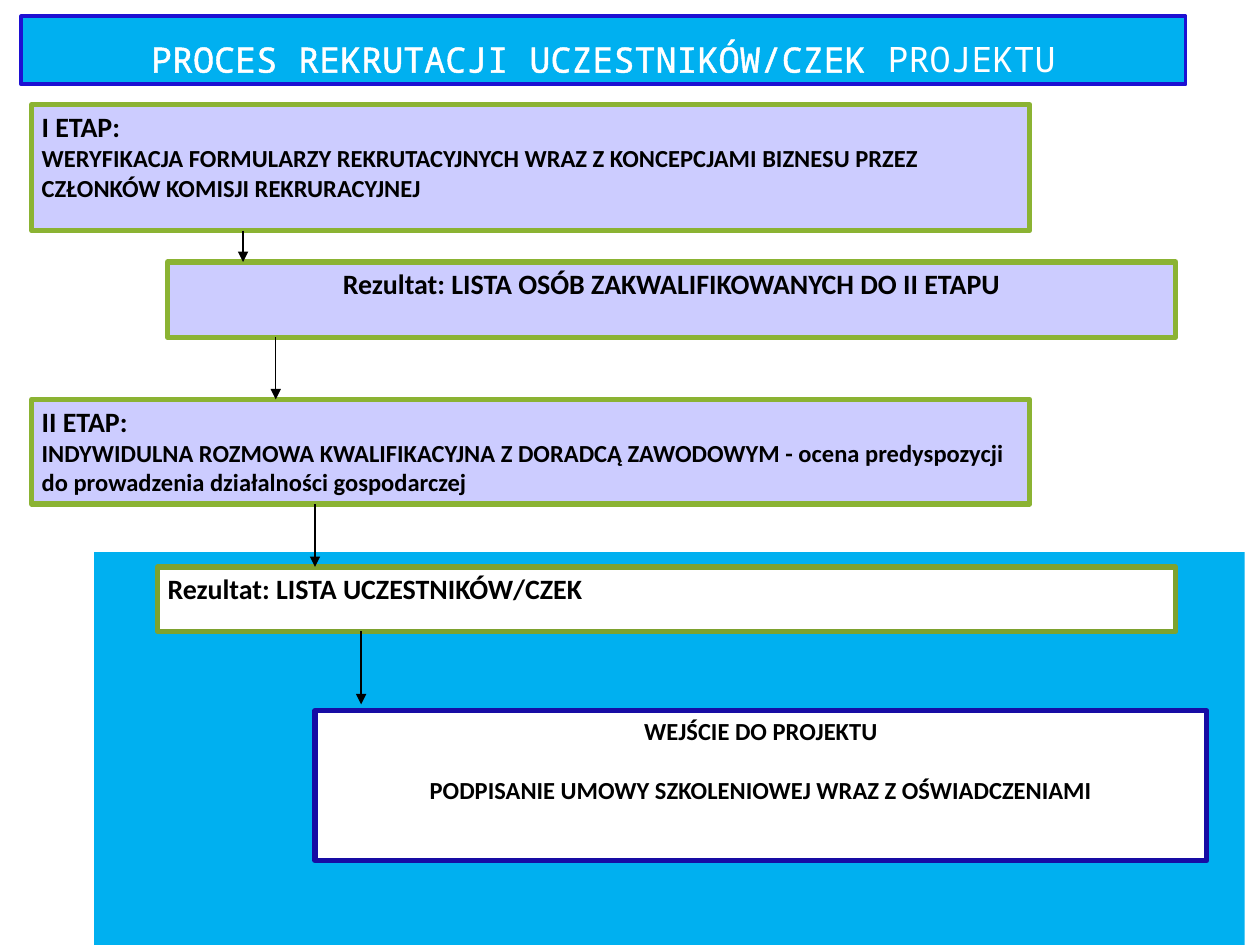
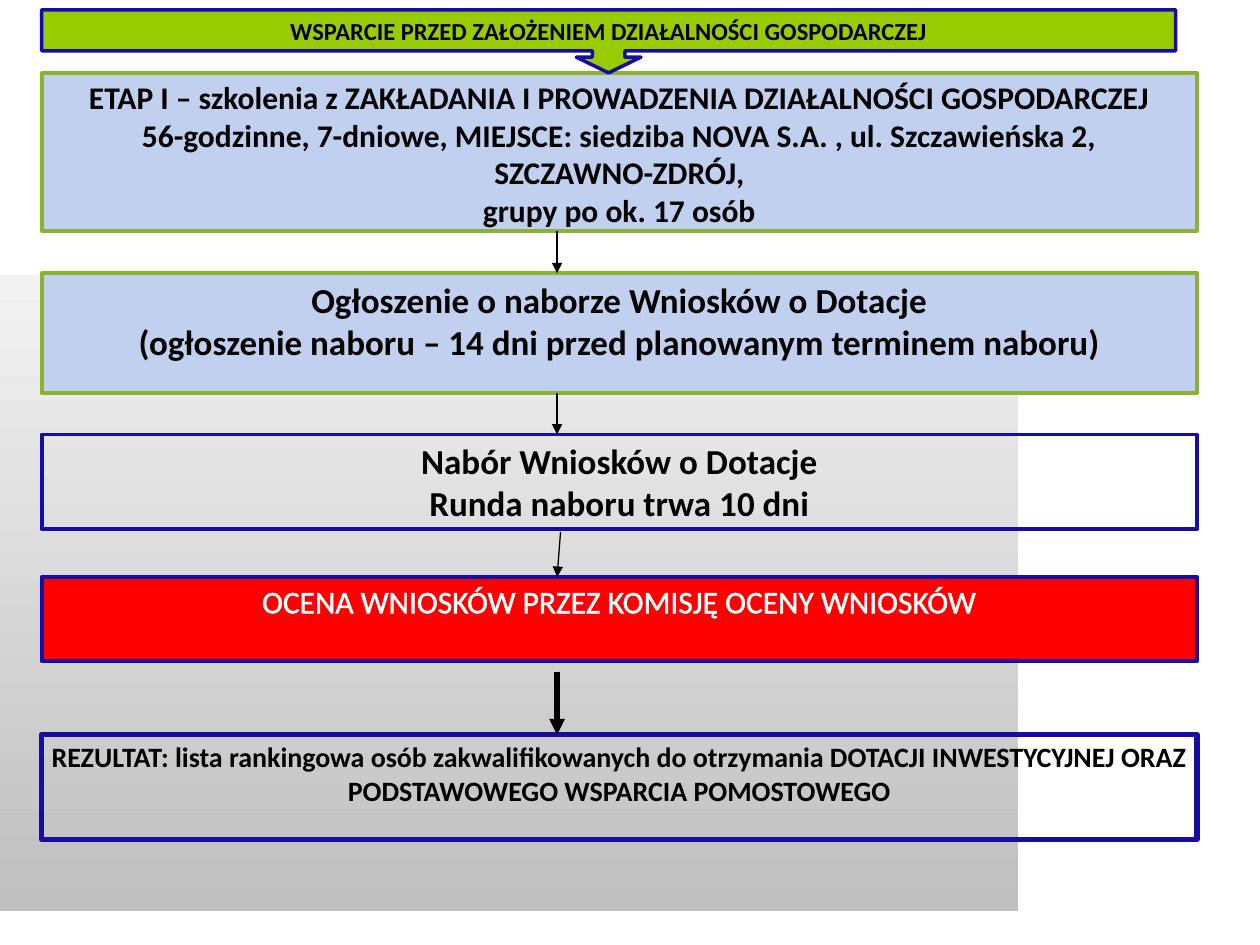
"""Build two flow-chart slides on recruitment and on support before starting a business."""
from lxml import etree
from pptx import Presentation
from pptx import util as u
from pptx.dml.color import RGBColor
from pptx.enum import shapes, text
from pptx.oxml.ns import qn

BLACK, WHITE, RED = "000000", "FFFFFF", "FF0000"
SKY, LILAC, PALE_BLUE, LIME = "00B0F0", "CCCCFF", "C0D0EE", "99CC00"
GREEN, OLIVE, NAVY, VIOLET = "8BB333", "7EA22E", "170CA4", "1E10D2"
RECTANGLE = shapes.MSO_SHAPE.RECTANGLE
CENTER, LEFT = text.PP_ALIGN.CENTER, text.PP_ALIGN.LEFT
OUTLINE_WIDTH = 1.45

TITLE = [("PROCES REKRUTACJI UCZESTNIKÓW/CZEK ", True), ("PROJEKTU", False)]
RECRUITMENT_STEPS = [
    dict(at=(0.64, 2.11, 20.12, 2.54), fill=LILAC, line=GREEN, align=LEFT, lines=[
        ("I ETAP:", 16),
        ("WERYFIKACJA FORMULARZY REKRUTACYJNYCH WRAZ Z KONCEPCJAMI BIZNESU PRZEZ "
         "CZŁONKÓW KOMISJI REKRURACYJNEJ", 14)]),
    dict(at=(3.38, 5.28, 20.32, 1.52), fill=LILAC, line=GREEN, lines=[
        ("Rezultat: LISTA OSÓB ZAKWALIFIKOWANYCH DO II ETAPU", 16)]),
    dict(at=(0.64, 8.05, 20.12, 2.11), fill=LILAC, line=GREEN, align=LEFT, lines=[
        ("II ETAP:", 16),
        ("INDYWIDULNA ROZMOWA KWALIFIKACYJNA Z DORADCĄ ZAWODOWYM - ocena predyspozycji "
         "do prowadzenia działalności gospodarczej", 14)]),
    dict(at=(3.18, 11.43, 20.52, 1.3), fill=WHITE, line=OLIVE, align=LEFT, lines=[
        ("Rezultat: LISTA UCZESTNIKÓW/CZEK", 16)]),
    dict(at=(6.35, 14.33, 17.98, 3.02), fill=WHITE, line=NAVY, space_after=17, lines=[
        ("WEJŚCIE DO PROJEKTU", 14),
        ("PODPISANIE UMOWY SZKOLENIOWEJ WRAZ Z OŚWIADCZENIAMI", 14)]),
]
RECRUITMENT_ARROWS = [dict(x=4.9), dict(x=5.56), dict(x=6.35), dict(x=7.28, end_gap=0.13)]

SUPPORT_HEADER = [("WSPARCIE PRZED ZAŁOŻENIEM DZIAŁALNOŚCI GOSPODARCZEJ", 14)]
SUPPORT_LEFT, SUPPORT_WIDTH = 0.84, 23.29
SUPPORT_STEPS = [
    dict(top=1.47, height=3.18, fill=PALE_BLUE, line=GREEN, lines=[
        ("ETAP I – szkolenia z ZAKŁADANIA I PROWADZENIA DZIAŁALNOŚCI GOSPODARCZEJ", 18),
        ("56-godzinne, 7-dniowe, MIEJSCE: siedziba NOVA S.A. , ul. Szczawieńska 2,", 18),
        ("SZCZAWNO-ZDRÓJ,", 18),
        ("grupy po ok. 17 osób", 18)]),
    dict(top=5.51, height=2.41, fill=PALE_BLUE, line=GREEN, lines=[
        ("Ogłoszenie o naborze Wniosków o Dotacje", 20),
        ("(ogłoszenie naboru – 14 dni przed planowanym terminem naboru)", 20)]),
    dict(top=8.76, height=1.91, line=NAVY, lines=[
        ("Nabór Wniosków o Dotacje", 20),
        ("Runda naboru trwa 10 dni", 20)]),
    dict(top=11.63, height=1.7, fill=RED, line=NAVY, color=WHITE, bold=False, outlined=True,
         lines=[("OCENA WNIOSKÓW PRZEZ KOMISJĘ OCENY WNIOSKÓW", 18)]),
    dict(top=14.81, height=2.11, line=NAVY, weight=3, lines=[
        ("REZULTAT: lista rankingowa osób zakwalifikowanych do otrzymania DOTACJI "
         "INWESTYCYJNEJ ORAZ PODSTAWOWEGO WSPARCIA POMOSTOWEGO", 16)]),
]
SUPPORT_ARROWS = [dict(x=11.23), dict(x=11.23), dict(x=11.23, start_x=11.3, start_gap=0.05),
                  dict(x=11.23, start_gap=0.21, weight=3)]


def rgb(color):
    """Turn a hex string into a colour."""
    return RGBColor.from_string(color)


def add_box(slide, at, fill=None, line=None, weight=3, kind=RECTANGLE):
    """Add a preset shape with a plain fill and border."""
    shape = slide.shapes.add_shape(kind, *map(u.Cm, at))
    shape.shadow.inherit = False
    if fill:
        shape.fill.solid()
        shape.fill.fore_color.rgb = rgb(fill)
    else:
        shape.fill.background()
    if line:
        shape.line.color.rgb = rgb(line)
        shape.line.width = u.Pt(weight)
    else:
        shape.line.fill.background()
    return shape


def add_run(paragraph, words, size, font="Calibri", color=BLACK, bold=True, outlined=False):
    """Add formatted words to a paragraph."""
    run = paragraph.add_run()
    run.text = words
    run.font.size, run.font.name, run.font.bold = u.Pt(size), font, bold
    run.font.color.rgb = rgb(color)
    if outlined:
        outline = etree.Element(qn("a:ln"), w=str(u.Pt(OUTLINE_WIDTH)))
        solid = etree.SubElement(outline, qn("a:solidFill"))
        etree.SubElement(solid, qn("a:srgbClr"), val=color)
        run.font._element.insert(0, outline)


def prepare_frame(shape, top=0.1, anchor=text.MSO_ANCHOR.TOP):
    """Set the margins and anchor of a shape's text."""
    frame = shape.text_frame
    frame.word_wrap = True
    frame.vertical_anchor = anchor
    frame.margin_left = frame.margin_right = u.Cm(0.2)
    frame.margin_top, frame.margin_bottom = u.Cm(top), u.Cm(0.1)
    return frame


def write(shape, lines, align=CENTER, space_after=0, anchor=text.MSO_ANCHOR.TOP, **style):
    """Write one paragraph for each text and size."""
    frame = prepare_frame(shape, anchor=anchor)
    for number, (words, size) in enumerate(lines):
        paragraph = frame.add_paragraph() if number else frame.paragraphs[0]
        paragraph.alignment = align
        if number < len(lines) - 1:
            paragraph.space_after = u.Pt(space_after)
        add_run(paragraph, words, size, **style)


def add_step(slide, at, lines, fill=None, line=None, weight=3, **style):
    """Add one box of the flow with its text."""
    write(add_box(slide, at, fill, line, weight), lines, **style)


def add_arrow(slide, upper, lower, x, start_x=None, start_gap=0, end_gap=0, weight=0.75):
    """Draw an arrow from the bottom of one box to the top of the next."""
    start_y = upper[1] + upper[3] + start_gap
    ends = (start_x or x, start_y, x, lower[1] - end_gap)
    arrow = slide.shapes.add_connector(shapes.MSO_CONNECTOR.STRAIGHT, *map(u.Cm, ends))
    arrow.line.color.rgb = rgb(BLACK)
    arrow.line.width = u.Pt(weight)
    etree.SubElement(arrow.line._get_or_add_ln(), qn("a:tailEnd"), type="triangle")
    etree.SubElement(arrow._element.spPr, qn("a:effectLst"))


def add_flow(slide, steps, arrows):
    """Draw all steps and the arrows between them."""
    for step in steps:
        add_step(slide, **step)
    for upper, lower, arrow in zip(steps, steps[1:], arrows):
        add_arrow(slide, upper["at"], lower["at"], **arrow)


def build_recruitment(slide):
    """Build the recruitment slide."""
    add_box(slide, (1.9, 11.13, 23.19, 7.92), SKY)
    title = add_box(slide, (0.43, 0.33, 23.47, 1.37), SKY, VIOLET, 2.25)
    paragraph = prepare_frame(title, top=0.43).paragraphs[0]
    paragraph.alignment = CENTER
    for words, outlined in TITLE:
        add_run(paragraph, words, 20, "Noto Sans Mono", WHITE, bold=False, outlined=outlined)
    add_flow(slide, RECRUITMENT_STEPS, RECRUITMENT_ARROWS)


def build_support(slide):
    """Build the slide on support before starting a business."""
    backdrop = add_box(slide, (0, 5.54, 20.52, 12.83))
    backdrop.fill.gradient()
    backdrop.fill.gradient_angle = 270
    for stop, color in zip(backdrop.fill.gradient_stops, ("F2F2F2", "BFBFBF")):
        stop.color.rgb = rgb(color)
    steps = []
    for step in SUPPORT_STEPS:
        details = {"weight": 2.25, **step}
        top, height = details.pop("top"), details.pop("height")
        steps.append({"at": (SUPPORT_LEFT, top, SUPPORT_WIDTH, height), **details})
    add_flow(slide, steps, SUPPORT_ARROWS)
    header = add_box(slide, (SUPPORT_LEFT, 0.2, 22.86, 1.27), LIME, NAVY, 2,
                     shapes.MSO_SHAPE.DOWN_ARROW_CALLOUT)
    for number, value in enumerate((0.515, 0.514, 0.25, 0.65)):
        header.adjustments[number] = value
    write(header, SUPPORT_HEADER, anchor=text.MSO_ANCHOR.MIDDLE)


def main():
    """Build and save the presentation."""
    presentation = Presentation()
    presentation.slide_width, presentation.slide_height = u.Cm(25.4), u.Cm(19.05)
    for build in (build_recruitment, build_support):
        build(presentation.slides.add_slide(presentation.slide_layouts[6]))
    presentation.save("out.pptx")


if __name__ == "__main__":
    main()
